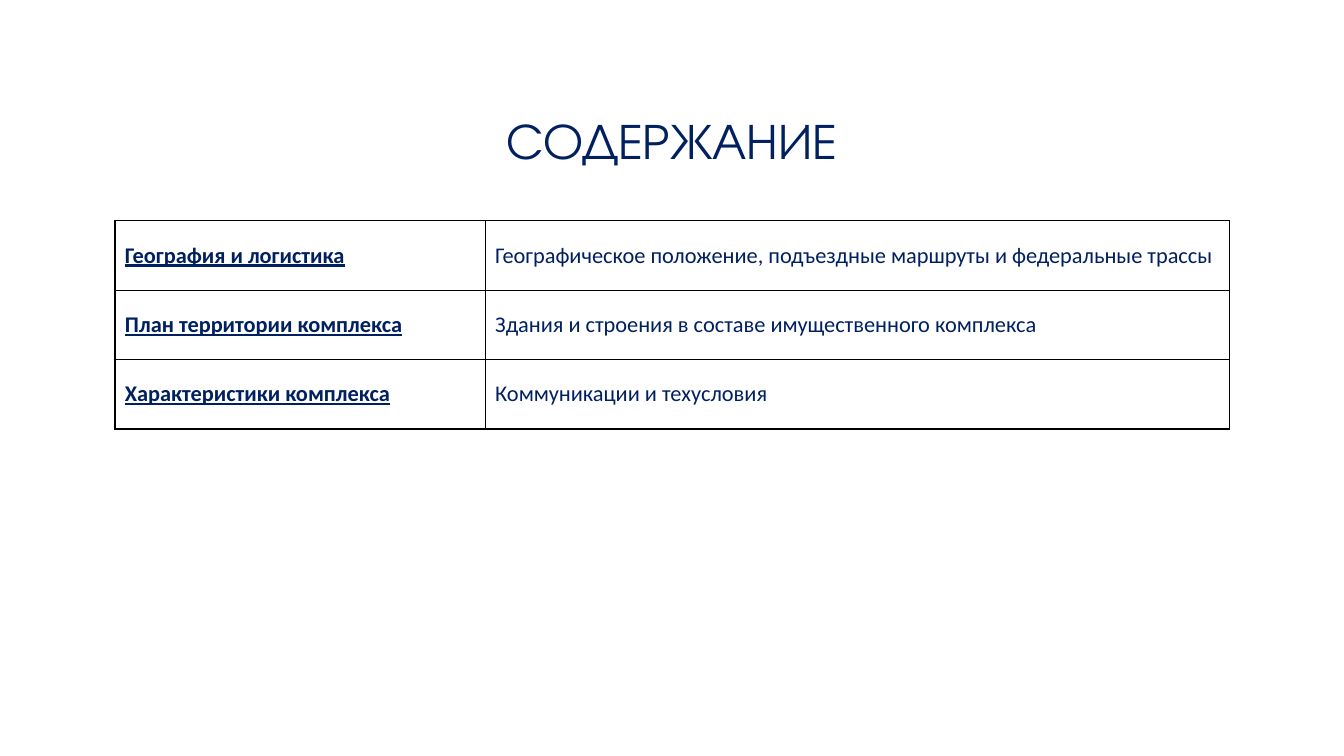
from lxml import etree
from pptx import Presentation
from pptx import util as u
from pptx.dml.color import RGBColor
from pptx.enum import text
from pptx.oxml.ns import qn

NAVY = RGBColor(0x00, 0x20, 0x60)
BLACK = RGBColor(0x00, 0x00, 0x00)
TOPICS = [
    ("География и логистика",
     "Географическое положение, подъездные маршруты и федеральные трассы"),
    ("План территории комплекса",
     "Здания и строения в составе имущественного комплекса"),
    ("Характеристики комплекса", "Коммуникации и техусловия"),
]


class Page:
    head = "TeX Gyre Adventor"
    body = "Calibri"
    pad = u.Cm(0.25)

    def __init__(self, deck):
        self.slide = deck.slides.add_slide(deck.slide_layouts[5])

    def style(self, par, name, size, bold=False, line=False):
        for run in par.runs:
            font = run.font
            font.name = name
            font.size = u.Pt(size)
            font.bold = bold
            font.underline = line
            font.color.rgb = NAVY

    def title(self, words, left, top, width, height):
        box = self.slide.shapes.title
        box.left, box.top, box.width, box.height = map(
            u.Cm, (left, top, width, height))
        frame = box.text_frame
        frame.text = words
        frame.word_wrap = True
        frame.auto_size = text.MSO_AUTO_SIZE.NONE
        frame.vertical_anchor = text.MSO_ANCHOR.BOTTOM
        frame.margin_left = frame.margin_right = self.pad
        frame.margin_top = frame.margin_bottom = self.pad
        par = frame.paragraphs[0]
        par.alignment = text.PP_ALIGN.CENTER
        par.line_spacing = 0.9
        self.style(par, self.head, 36)

    def border(self, cell):
        props = cell._tc.get_or_add_tcPr()
        for spot, side in enumerate(("a:lnL", "a:lnR", "a:lnT", "a:lnB")):
            line = etree.Element(qn(side), w=str(u.Pt(1)))
            fill = etree.SubElement(line, qn("a:solidFill"))
            etree.SubElement(fill, qn("a:srgbClr"), val=str(BLACK))
            props.insert(spot, line)

    def cell(self, cell, words, link):
        cell.text_frame.text = words
        cell.vertical_anchor = text.MSO_ANCHOR.MIDDLE
        cell.margin_left = cell.margin_right = self.pad
        cell.margin_top = cell.margin_bottom = 0
        cell.fill.background()
        self.border(cell)
        par = cell.text_frame.paragraphs[0]
        if not link:
            par.space_after = u.Pt(16)
        self.style(par, self.body, 16, link, link)

    def table(self, rows, left, top, widths, height):
        frame = self.slide.shapes.add_table(
            len(rows), len(widths), u.Cm(left), u.Cm(top),
            u.Cm(sum(widths)), u.Cm(height * len(rows)))
        grid = frame.table
        grid.first_row = grid.horz_banding = False
        for col, width in zip(grid.columns, widths):
            col.width = u.Cm(width)
        for row, words in zip(grid.rows, rows):
            row.height = u.Cm(height)
            for spot, (cell, item) in enumerate(zip(row.cells, words)):
                self.cell(cell, item, spot == 0)


def main():
    deck = Presentation()
    deck.slide_width, deck.slide_height = u.Cm(33.87), u.Cm(19.05)
    page = Page(deck)
    page.title("СОДЕРЖАНИЕ", 12.07, 2.69, 9.73, 1.85)
    page.table(TOPICS, 2.9, 5.56, (9.33, 18.75), 1.75)
    deck.save("out.pptx")


if __name__ == "__main__":
    main()
